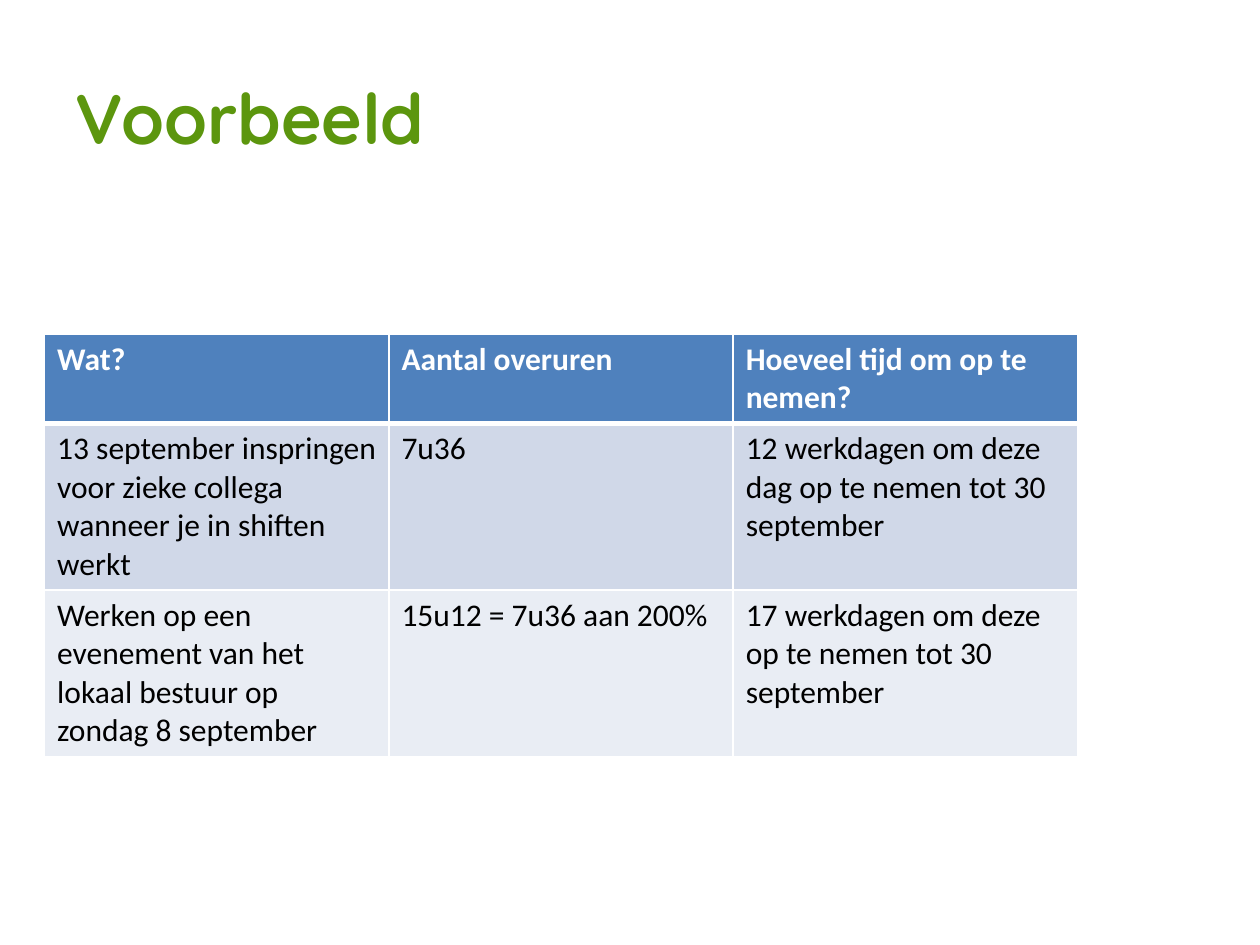
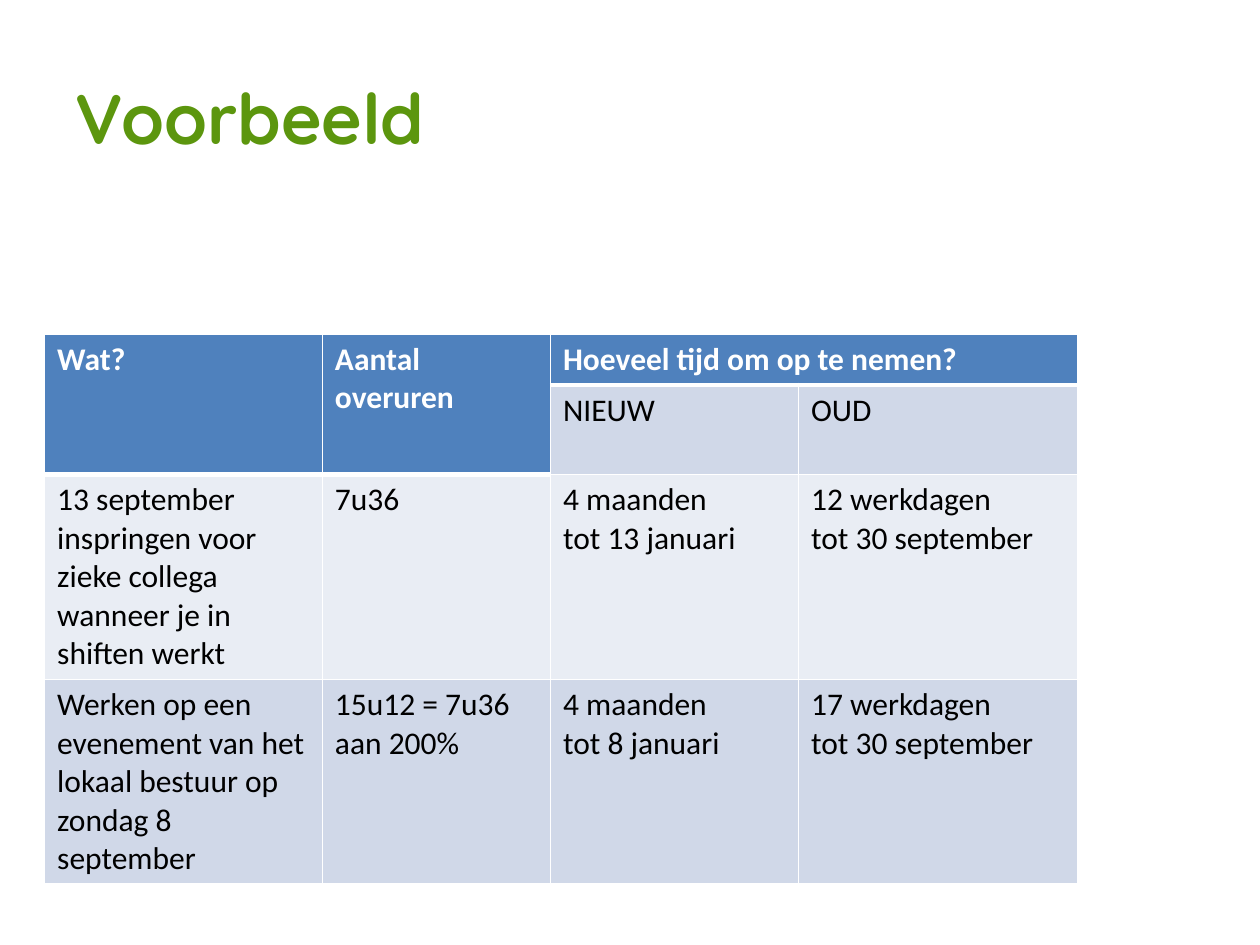
import pptx
import pptx.util
import pptx.dml.color
import pptx.enum.text
import pptx.oxml.ns
import lxml.etree

Cm, Pt = pptx.util.Cm, pptx.util.Pt
hues = {"title": "5C960E", "head": "4F81BD", "odd": "D0D8E8",
        "even": "E9EDF4", "line": "FFFFFF", "text": "000000"}

# Texts that both tables use
shift = "13 september inspringen voor zieke collega wanneer je in shiften werkt"
event = "Werken op een evenement van het lokaal bestuur op zondag 8 september"
single, double = "7u36", "15u12 = 7u36 aan 200%"
time = "Hoeveel tijd om op te nemen?"

# Sizes in cm; a merge is top, left, bottom, right; heads is the depth per column
slides = [
    {"cols": [6.94] * 3, "rows": [1.78, 3.35, 3.35],
     "heads": [1, 1, 1], "merges": [],
     "cells": [
         ["Wat?", "Aantal overuren", time],
         [shift, single, "12 werkdagen om deze dag op te nemen tot 30 september"],
         [event, double, "17 werkdagen om deze op te nemen tot 30 september"]]},
    {"cols": [5.6, 4.6, 5, 5.62], "rows": [1.03, 1.8, 4.13, 4.13],
     "heads": [2, 2, 1, 1],
     "merges": [(0, 0, 1, 0), (0, 1, 1, 1), (0, 2, 0, 3)],
     "cells": [
         ["Wat?", "Aantal overuren", time, ""],
         ["", "", "NIEUW", "OUD"],
         [shift, single, "4 maanden\ntot 13 januari", "12 werkdagen\ntot 30 september"],
         [event, double, "4 maanden\ntot 8 januari", "17 werkdagen\ntot 30 september"]]},
]


def color(name):
    return pptx.dml.color.RGBColor.from_string(hues[name])


def edge(cell, side, width):
    tag = pptx.oxml.ns.qn
    props = cell._tc.get_or_add_tcPr()
    line = lxml.etree.SubElement(props, tag("a:ln" + side), w=str(Pt(width)))
    fill = lxml.etree.SubElement(line, tag("a:solidFill"))
    lxml.etree.SubElement(fill, tag("a:srgbClr"), val=hues["line"])


deck = pptx.Presentation()
deck.slide_width, deck.slide_height = Cm(25.4), Cm(19.05)

for data in slides:
    slide = deck.slides.add_slide(deck.slide_layouts[5])

    # Title
    title = slide.shapes.title
    title.left, title.top = Cm(1.27), Cm(0.76)
    title.width, title.height = Cm(20.83), Cm(3.18)
    frame = title.text_frame
    frame.text = "Voorbeeld"
    frame.vertical_anchor = pptx.enum.text.MSO_ANCHOR.MIDDLE
    para = frame.paragraphs[0]
    para.alignment = pptx.enum.text.PP_ALIGN.LEFT
    para.font.name, para.font.size, para.font.bold = "Quicksand", Pt(40), True
    para.font.color.rgb = color("title")

    # Table grid
    cols, rows = data["cols"], data["rows"]
    table = slide.shapes.add_table(
        len(rows), len(cols), Cm(0.9), Cm(6.73),
        Cm(sum(cols)), Cm(sum(rows))).table
    for col, width in zip(table.columns, cols):
        col.width = Cm(width)
    for row, height in zip(table.rows, rows):
        row.height = Cm(height)
    for top, left, bottom, right in data["merges"]:
        table.cell(top, left).merge(table.cell(bottom, right))

    # Cells: a thick line runs under the head
    for r, texts in enumerate(data["cells"]):
        for c, text in enumerate(texts):
            cell = table.cell(r, c)
            depth = data["heads"][c]
            head = r < depth
            last = r + (cell.span_height if cell.is_merge_origin else 1) == depth
            edge(cell, "L", 1)
            edge(cell, "R", 1)
            edge(cell, "T", 3 if r == depth else 1)
            edge(cell, "B", 3 if last else 1)
            cell.fill.solid()
            cell.fill.fore_color.rgb = color(
                "head" if head else "odd" if r % 2 else "even")
            cell.text = text
            for para in cell.text_frame.paragraphs:
                para.font.name, para.font.size = "Calibri", Pt(18)
                para.font.bold = head
                para.font.color.rgb = color("line" if head else "text")

deck.save("out.pptx")
